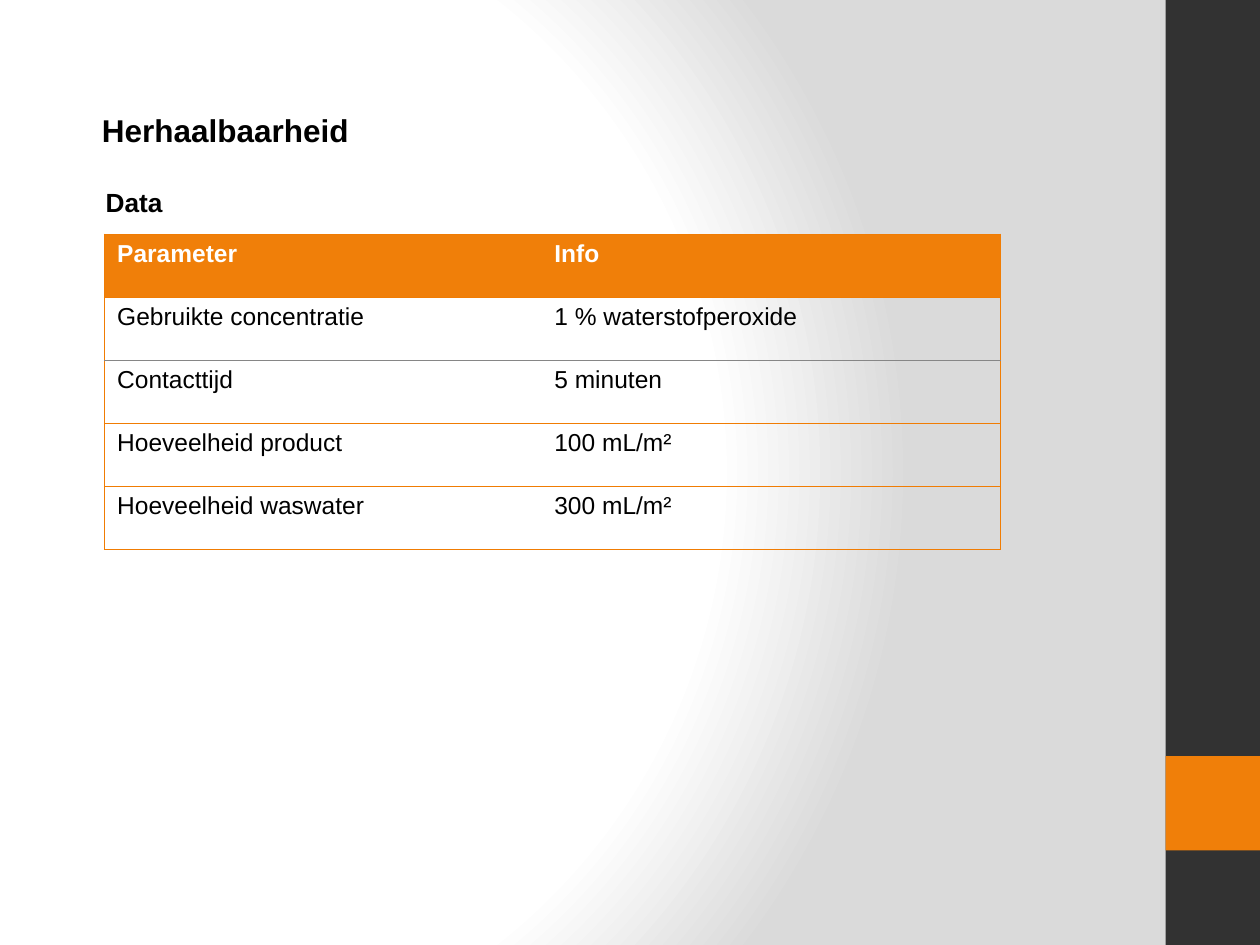
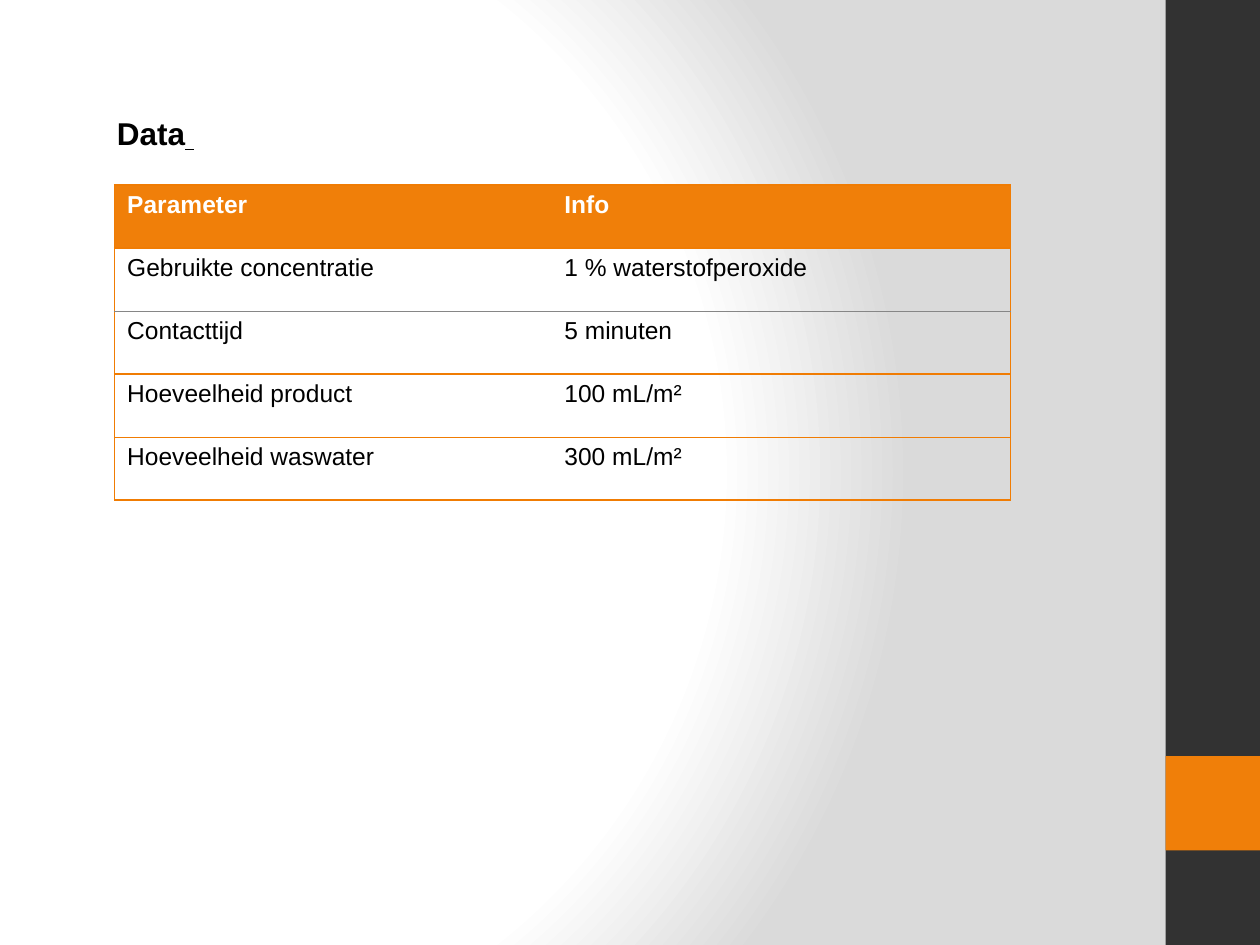
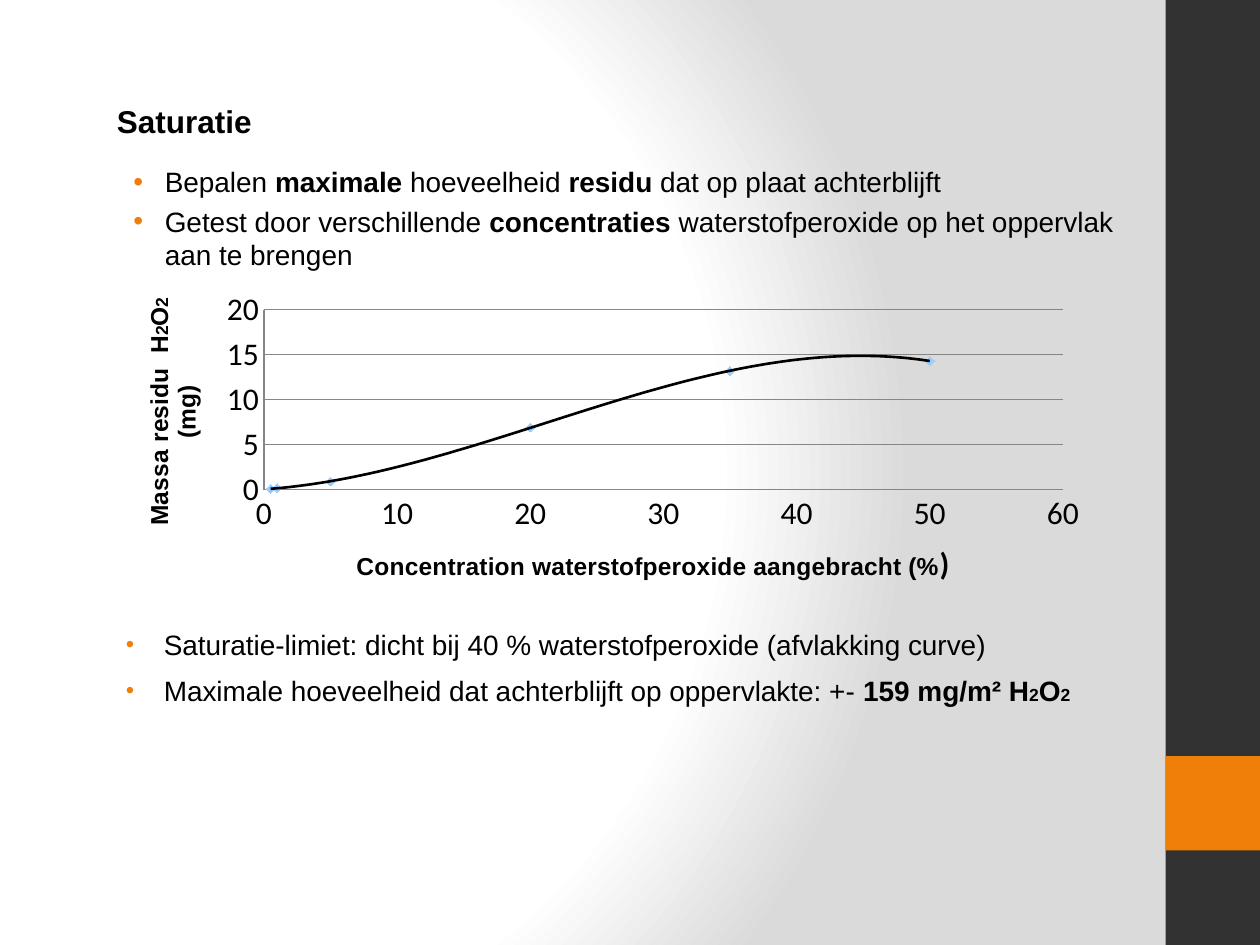
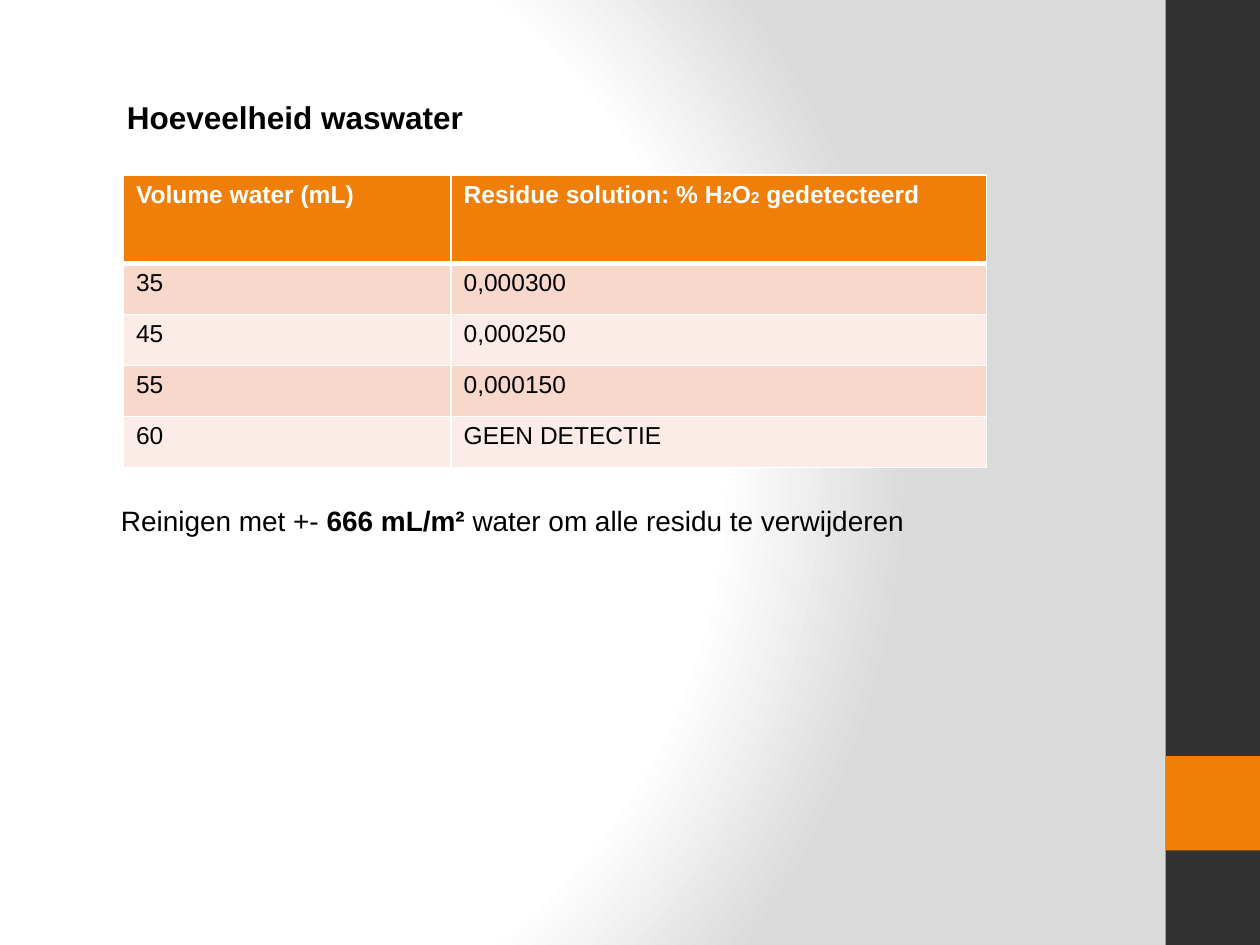
"""Build four slides on hydrogen peroxide residue: two data tables, a saturation chart and a rinse table."""
from pptx import Presentation
from pptx.chart.data import XyChartData
from pptx.dml.color import RGBColor
from pptx.enum.chart import XL_CHART_TYPE, XL_MARKER_STYLE, XL_TICK_MARK
from pptx.enum.shapes import MSO_SHAPE
from pptx.oxml import parse_xml
from pptx.oxml.ns import nsdecls, qn
from pptx.util import Inches, Pt

RECTANGLE = MSO_SHAPE.RECTANGLE
SCATTER = XL_CHART_TYPE.XY_SCATTER
DIAMOND = XL_MARKER_STYLE.DIAMOND
NO_TICK = XL_TICK_MARK.NONE


class Theme:
    font = "Arial"
    chart_font = "Calibri"
    black = "000000"
    white = "FFFFFF"
    dark = "323232"
    orange = "F07F09"
    rule = "F07C03"
    grey = "868686"
    shade = "DADADA"
    pink = "F9D8CC"
    pale = "FCECE7"
    marker = "99CCFF"
    title = 18
    subtitle = 15
    body = 16
    table = 14
    small = 10
    tiny = 9


deck = Presentation()
deck.slide_width, deck.slide_height = Inches(10), Inches(7.5)
COLUMN = deck.slide_width / 40
ROW = deck.slide_height / 30


def place(left, top, width, height):
    return [round(left * COLUMN), round(top * ROW), round(width * COLUMN), round(height * ROW)]


def write(para, spans, color=Theme.black):
    for text, size, bold in spans:
        span = para.add_run()
        span.text = text
        span.font.name = Theme.font
        span.font.size = Pt(size)
        span.font.bold = bold
        span.font.color.rgb = RGBColor.from_string(color)


backdrop = deck.slide_master.background
backdrop.fill.solid()
solid = next(deck.slide_master.element.iter(qn("p:bgPr")))[0]
stops = "".join(
    f'<a:gs pos="{share * 1000}"><a:srgbClr val="{color}"/></a:gs>'
    for share, color in [(0, Theme.white), (75, Theme.white), (100, Theme.shade)]
)
solid.getparent().replace(solid, parse_xml(
    f'<a:gradFill rotWithShape="1" {nsdecls("a")}><a:gsLst>{stops}</a:gsLst><a:path path="circle">'
    '<a:fillToRect l="20000" t="50000" r="100000" b="50000"/></a:path></a:gradFill>'
))

pages = [deck.slides.add_slide(deck.slide_layouts[6]) for _ in range(4)]
repeat_page, data_page, saturation_page, rinse_page = pages

for page in pages:
    for top, height, color in [(0, 30, Theme.dark), (24, 3, Theme.orange)]:
        band = page.shapes.add_shape(RECTANGLE, *place(37, top, 3, height))
        band.shadow.inherit = False
        band.fill.solid()
        band.fill.fore_color.rgb = RGBColor.from_string(color)
        band.line.fill.background()

headings = [
    (repeat_page, (2.84, 3.32, 25.12, 1.6), 0, [("Herhaalbaarheid", Theme.title, True)]),
    (repeat_page, (2.68, 5.72, 3.48, 1.4), 0.07, [("Data", Theme.subtitle, True)]),
    (data_page, (3.32, 3.44, 25.12, 1.6), 0, [("Data", Theme.title, True), (" ", Theme.title, False)]),
    (saturation_page, (3.32, 3.04, 25.12, 1.6), 0, [("Saturatie", Theme.title, True)]),
    (rinse_page, (3.64, 2.92, 25.76, 1.6), 0, [("Hoeveelheid waswater", Theme.title, True)]),
]
for page, area, indent, spans in headings:
    box = page.shapes.add_textbox(*place(*area))
    box.text_frame.word_wrap = True
    para = box.text_frame.paragraphs[0]
    para._p.get_or_add_pPr().set("marL", str(Inches(indent)))
    write(para, spans)
    for span in para.runs:
        if span.text == " ":
            span.font.underline = True

size = Theme.body
methods = [
    [("Bepalen ", size, False), ("maximale", size, True), (" hoeveelheid ", size, False),
     ("residu", size, True), (" dat op plaat achterblijft", size, False)],
    [("Getest door verschillende ", size, False), ("concentraties ", size, True),
     ("waterstofperoxide op het oppervlak aan te brengen", size, False)],
]
findings = [
    [("Saturatie-limiet: dicht bij 40 % waterstofperoxide (afvlakking curve)", size, False)],
    [("Maximale hoeveelheid dat achterblijft op oppervlakte: +- ", size, False),
     ("159 mg/m² H", size, True), ("2", Theme.small, True), ("O", size, True), ("2", Theme.small, True)],
]
conclusion = [
    [("Reinigen met +- ", size, False), ("666 mL/m² ", size, True),
     ("water om alle residu te verwijderen", size, False)],
]
texts = [
    (saturation_page, (3.32, 5.04, 34, 16.32), 0.1, 0.38, -0.25, 3.2, 100, methods),
    (saturation_page, (3.68, 19.72, 34.8, 6), 0, 0.38, -0.3, 7, 85, findings),
    (rinse_page, (3.56, 15.8, 34, 5.24), 0, 0.07, 0, 7, None, conclusion),
]
for page, area, inset, margin, hang, gap, bullet_size, lines in texts:
    box = page.shapes.add_textbox(*place(*area))
    frame = box.text_frame
    frame.word_wrap = True
    frame.margin_left = frame.margin_right = Inches(inset)
    for number, spans in enumerate(lines):
        para = frame.add_paragraph() if number else frame.paragraphs[0]
        para.space_before = Pt(gap)
        write(para, spans)
        props = para._p.get_or_add_pPr()
        props.set("marL", str(Inches(margin)))
        props.set("indent", str(Inches(hang)))
        if bullet_size:
            for part in [
                f'<a:buClr {nsdecls("a")}><a:srgbClr val="{Theme.orange}"/></a:buClr>',
                f'<a:buSzPct {nsdecls("a")} val="{bullet_size * 1000}"/>',
                f'<a:buFont {nsdecls("a")} typeface="{Theme.font}"/>',
                f'<a:buChar {nsdecls("a")} char="•"/>',
            ]:
                props.append(parse_xml(part))

parameters = [
    ["Parameter", "Info"],
    ["Gebruikte concentratie", "1 % waterstofperoxide"],
    ["Contacttijd", "5 minuten"],
    ["Hoeveelheid product", "100 mL/m²"],
    ["Hoeveelheid waswater", "300 mL/m²"],
]
rinses = [
    ["Volume water (mL)", "Residue solution: % H|2|O|2| gedetecteerd"],
    ["35", "0,000300"],
    ["45", "0,000250"],
    ["55", "0,000150"],
    ["60", "GEEN DETECTIE"],
]
open_style = {
    "widths": [13.88, 14.56], "heights": [2] * 5, "side": Theme.rule, "inner": False,
    "fills": [Theme.orange] + [None] * 4,
    "rules": [(Theme.rule, 1), (Theme.rule, 1), (Theme.grey, 0.5),
              (Theme.rule, 1), (Theme.rule, 0.5), (Theme.rule, 1)],
}
banded_style = {
    "widths": [10.4, 17], "heights": [2.8] + [1.62] * 4, "side": Theme.white, "inner": True,
    "fills": [Theme.orange] + [Theme.pink, Theme.pale] * 2,
    "rules": [(Theme.white, 1), (Theme.white, 3)] + [(Theme.white, 1)] * 4,
}
tables = [
    (repeat_page, 3.32, 7.44, parameters, open_style),
    (data_page, 3.64, 5.88, parameters, open_style),
    (rinse_page, 3.92, 5.56, rinses, banded_style),
]
for page, left, top, rows, style in tables:
    widths, heights, rules = style["widths"], style["heights"], style["rules"]
    area = place(left, top, sum(widths), sum(heights))
    table = page.shapes.add_table(len(rows), len(widths), *area).table
    table.horz_banding = False
    table._tbl.tblPr.find(qn("a:tableStyleId")).text = "{2D5ABB26-0587-4C30-8999-92F81FD0307C}"
    for column, width in zip(table.columns, widths):
        column.width = round(width * COLUMN)
    for r, labels in enumerate(rows):
        table.rows[r].height = round(heights[r] * ROW)
        for c, label in enumerate(labels):
            cell = table.cell(r, c)
            spans = [
                (piece, Theme.tiny if piece == "2" else Theme.table, r == 0)
                for piece in label.split("|")
            ]
            write(cell.text_frame.paragraphs[0], spans, Theme.black if r else Theme.white)
            side = (style["side"], 1)
            edges = {
                "lnL": side if c == 0 or style["inner"] else None,
                "lnR": side if c == len(widths) - 1 or style["inner"] else None,
                "lnT": rules[r],
                "lnB": rules[r + 1],
            }
            props = cell._tc.get_or_add_tcPr()
            for tag, edge in edges.items():
                if edge:
                    color, weight = edge
                    props.append(parse_xml(
                        f'<a:{tag} {nsdecls("a")} w="{Pt(weight)}"><a:solidFill>'
                        f'<a:srgbClr val="{color}"/></a:solidFill></a:{tag}>'
                    ))
            if style["fills"][r]:
                cell.fill.solid()
                cell.fill.fore_color.rgb = RGBColor.from_string(style["fills"][r])
            else:
                cell.fill.background()

data = XyChartData()
residue = data.add_series("Series 1")
for concentration, mass in zip([0.5, 1, 5, 20, 35, 50], [0.1, 0.2, 0.9, 6.9, 13.2, 14.3]):
    residue.add_data_point(concentration, mass)
chart = saturation_page.shapes.add_chart(SCATTER, *place(3.68, 9, 31.32, 10.4), data).chart
chart.has_legend = False
chart.has_title = False
chart.font.name = Theme.chart_font
chart.font.size = Pt(Theme.title)
chart.font.color.rgb = RGBColor.from_string(Theme.black)

size = Theme.table
axes = [
    (chart.category_axis, 60, 10, False,
     [("Concentration waterstofperoxide aangebracht (%", size, True), (")", Theme.title, True)]),
    (chart.value_axis, 20, 5, True,
     [("Massa residu  H", size, True), ("2", Theme.small, True), ("O", size, True),
      ("2", Theme.small, True), (" (mg)", size, True)]),
]
for axis, maximum, step, grid, spans in axes:
    axis.minimum_scale, axis.maximum_scale, axis.major_unit = 0, maximum, step
    axis.major_tick_mark = axis.minor_tick_mark = NO_TICK
    axis.has_major_gridlines = grid
    axis.format.line.color.rgb = RGBColor.from_string(Theme.grey)
    if grid:
        axis.major_gridlines.format.line.color.rgb = RGBColor.from_string(Theme.grey)
    write(axis.axis_title.text_frame.paragraphs[0], spans)
chart.category_axis.axis_title.text_frame.paragraphs[0].runs[-1].font.name = Theme.chart_font

plot = chart.plots[0]
plot.vary_by_categories = False
series = plot.series[0]
series.smooth = False
series.format.line.fill.background()
series.marker.style = DIAMOND
series.marker.size = 5
series.marker.format.fill.solid()
series.marker.format.fill.fore_color.rgb = RGBColor.from_string(Theme.marker)
series.marker.format.line.fill.background()
series._element.find(qn("c:xVal")).addprevious(parse_xml(
    f'<c:trendline {nsdecls("c", "a")}><c:spPr><a:ln w="{Pt(1.5)}"><a:solidFill>'
    f'<a:srgbClr val="{Theme.black}"/></a:solidFill></a:ln></c:spPr><c:trendlineType val="poly"/>'
    '<c:order val="3"/><c:dispRSqr val="0"/><c:dispEq val="0"/></c:trendline>'
))

plot_area = chart._chartSpace.chart.plotArea
for layout in plot_area.findall(qn("c:layout")):
    plot_area.remove(layout)
shares = "".join(
    f'<c:{tag} val="{share}"/>' for tag, share in [("x", 0.15), ("y", 0.08), ("w", 0.81), ("h", 0.55)]
)
plot_area.insert(0, parse_xml(
    f'<c:layout {nsdecls("c")}><c:manualLayout><c:layoutTarget val="inner"/>'
    f'<c:xMode val="edge"/><c:yMode val="edge"/>{shares}</c:manualLayout></c:layout>'
))

deck.save("out.pptx")
